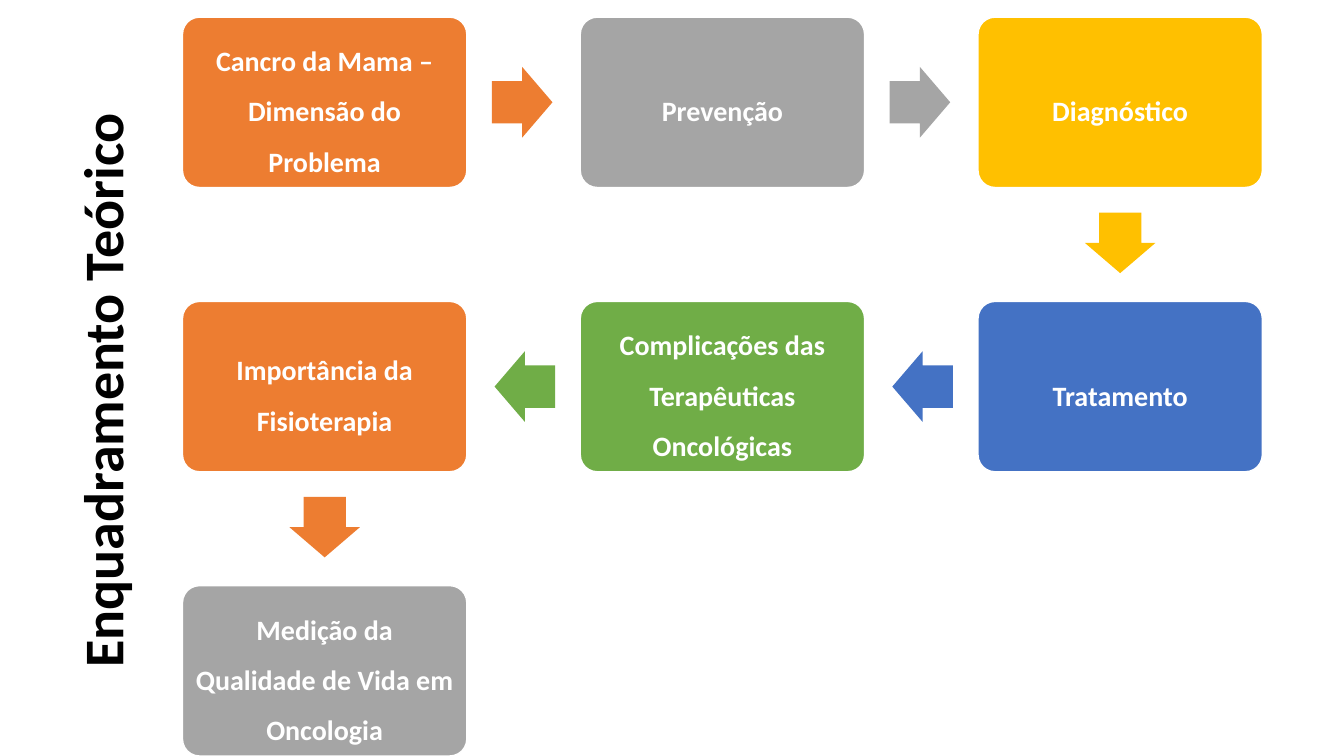
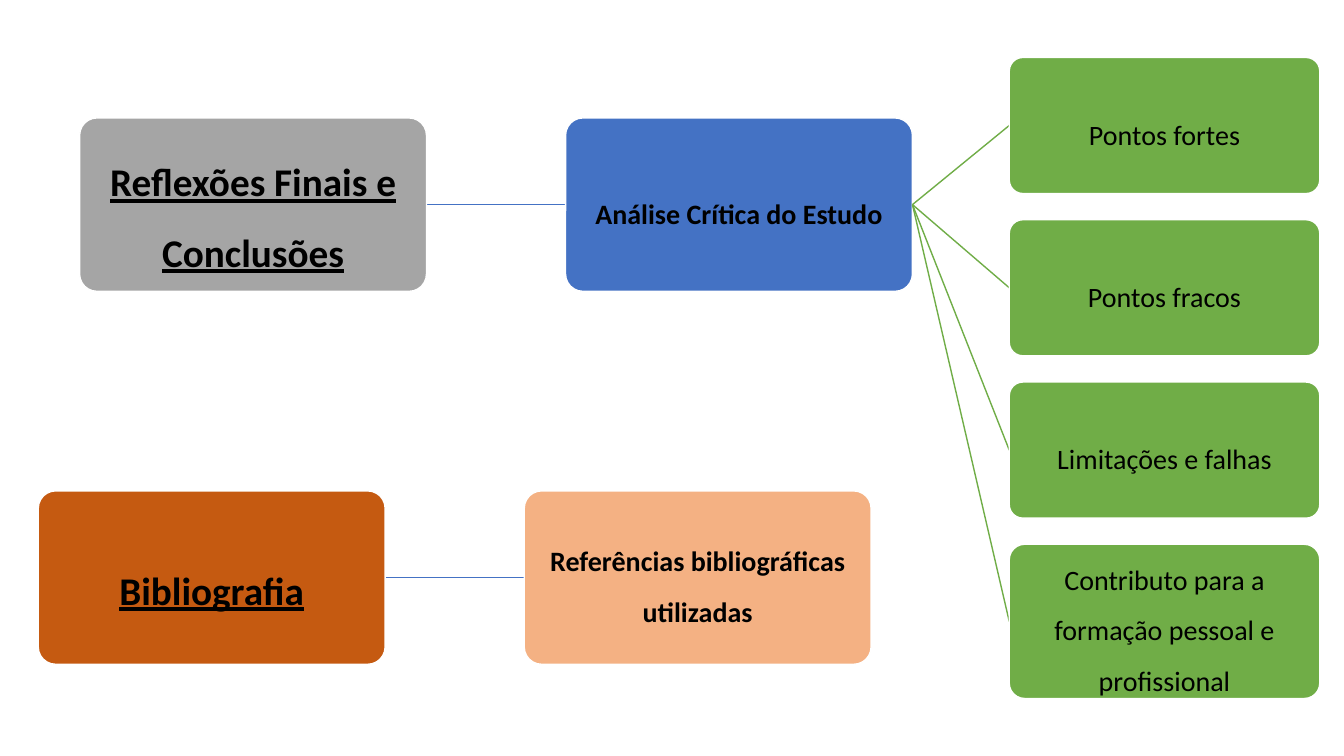
from pptx import Presentation
from pptx.dml.color import RGBColor
from pptx.enum.shapes import MSO_CONNECTOR, MSO_SHAPE
from pptx.enum.text import MSO_ANCHOR, MSO_AUTO_SIZE, PP_ALIGN
from pptx.oxml.ns import qn
from pptx.util import Inches, Pt
from lxml import etree

FONT = "Calibri"
COLORS = {
    "black": "000000", "white": "FFFFFF", "orange": "ED7D31", "gray": "A5A5A5",
    "gold": "FFC000", "blue": "4472C4", "green": "70AD47",
    "rust": "C55A11", "peach": "F4B183",
}

# Process steps: text, colour, column, row
STEPS = [
    ("Cancro da Mama – Dimensão do Problema", "orange", 0, 0),
    ("Prevenção", "gray", 1, 0),
    ("Diagnóstico", "gold", 2, 0),
    ("Tratamento", "blue", 2, 1),
    ("Complicações das Terapêuticas Oncológicas", "green", 1, 1),
    ("Importância da Fisioterapia", "orange", 0, 1),
    ("Medição da Qualidade de Vida em Oncologia", "gray", 0, 2),
]
STEP_WIDTH, STEP_HEIGHT = 2.82, 1.69
STEP_LEFT, STEP_TOP = 1.81, 0.17
COLUMN_PITCH, ROW_PITCH = (9.70 - STEP_LEFT) / 2, 2.82
ARROW_WIDTH, ARROW_HEIGHT, ARROW_OFFSET = 0.6, 0.7, 0.55
ARROW_ANGLES = {(1, 0): 0, (-1, 0): 180, (0, 1): 90}

# Trees: left, top, root text and colour, child text and colour
TREES = [
    (0.79, 1.17, "Reflexões Finais e Conclusões", "gray",
     "Análise Crítica do Estudo", "blue"),
    (0.38, 4.87, "Bibliografia", "rust",
     "Referências bibliográficas utilizadas", "peach"),
]
NODE_WIDTH, NODE_HEIGHT, NODE_PITCH = 3.44, 1.72, 4.82

# Leaves of the first tree: text, height
LEAVES = [
    ("Pontos fortes", 1.35),
    ("Pontos fracos", 1.35),
    ("Limitações e falhas", 1.35),
    ("Contributo para a formação pessoal e profissional", 1.53),
]
LEAF_LEFT, LEAF_TOP, LEAF_WIDTH, LEAF_PITCH = 10.01, 0.57, 3.08, 1.61


def color(name):
    return RGBColor.from_string(COLORS[name])


def style_text(para, size, ink="black", bold=True, underline=False):
    for span in para.runs:
        span.font.name = FONT
        span.font.size = Pt(size)
        span.font.color.rgb = color(ink)
        span.font.bold = bold
        span.font.underline = underline


def add_box(page, left, top, width, height, text, fill, inset=0.01, size=20, **style):
    box = page.shapes.add_shape(MSO_SHAPE.ROUNDED_RECTANGLE, Inches(left), Inches(top),
                                Inches(width), Inches(height))
    box.adjustments[0] = 0.1
    box.shadow.inherit = False
    box.fill.solid()
    box.fill.fore_color.rgb = color(fill)
    box.line.color.rgb = color("white")
    box.line.width = Pt(1)
    frame = box.text_frame
    frame.word_wrap = True
    frame.vertical_anchor = MSO_ANCHOR.MIDDLE
    frame.margin_left = frame.margin_right = Inches(inset)
    frame.margin_top = frame.margin_bottom = Inches(inset)
    frame.text = text
    para = frame.paragraphs[0]
    para.alignment = PP_ALIGN.CENTER
    para.line_spacing = 1.5
    style_text(para, size, **style)


def add_arrow(page, center_x, center_y, angle, fill):
    arrow = page.shapes.add_shape(
        MSO_SHAPE.RIGHT_ARROW, Inches(center_x - ARROW_WIDTH / 2),
        Inches(center_y - ARROW_HEIGHT / 2), Inches(ARROW_WIDTH), Inches(ARROW_HEIGHT))
    arrow.adjustments[0] = 0.6
    arrow.adjustments[1] = 0.5
    arrow.rotation = angle
    arrow.shadow.inherit = False
    arrow.fill.solid()
    arrow.fill.fore_color.rgb = color(fill)
    arrow.line.fill.background()


def add_line(page, start, end, stroke):
    line = page.shapes.add_connector(MSO_CONNECTOR.STRAIGHT,
                                     *(Inches(value) for value in (*start, *end)))
    line.line.color.rgb = color(stroke)
    line.line.width = Pt(1)
    properties = line._element.find(qn("p:spPr"))
    etree.SubElement(properties, qn("a:effectLst"))


def add_side_title(page, text):
    box = page.shapes.add_textbox(Inches(-1.88), Inches(3.45), Inches(5.77), Inches(0.77))
    box.rotation = 270
    frame = box.text_frame
    frame.word_wrap = True
    frame.auto_size = MSO_AUTO_SIZE.SHAPE_TO_FIT_TEXT
    frame.text = text
    style_text(frame.paragraphs[0], 40)


def add_process(page):
    for index, (text, fill, column, row) in enumerate(STEPS):
        left = STEP_LEFT + column * COLUMN_PITCH
        top = STEP_TOP + row * ROW_PITCH
        add_box(page, left, top, STEP_WIDTH, STEP_HEIGHT, text, fill,
                inset=0.08, ink="white")
        # Arrow towards the next step
        if index + 1 < len(STEPS):
            next_column, next_row = STEPS[index + 1][2:]
            across, down = next_column - column, next_row - row
            add_arrow(page,
                      left + STEP_WIDTH / 2 + across * (STEP_WIDTH / 2 + ARROW_OFFSET),
                      top + STEP_HEIGHT / 2 + down * (STEP_HEIGHT / 2 + ARROW_OFFSET),
                      ARROW_ANGLES[across, down], fill)


def add_tree(page, left, top, root, root_fill, child, child_fill):
    middle = top + NODE_HEIGHT / 2
    child_left = left + NODE_PITCH
    add_line(page, (left + NODE_WIDTH, middle), (child_left, middle), "blue")
    add_box(page, left, top, NODE_WIDTH, NODE_HEIGHT, root, root_fill,
            inset=0.02, size=28, underline=True)
    add_box(page, child_left, top, NODE_WIDTH, NODE_HEIGHT, child, child_fill)
    return child_left + NODE_WIDTH, middle


def add_leaves(page, start):
    for index, (text, height) in enumerate(LEAVES):
        top = LEAF_TOP + index * LEAF_PITCH
        add_line(page, start, (LEAF_LEFT, top + height / 2), "green")
        add_box(page, LEAF_LEFT, top, LEAF_WIDTH, height, text, "green", bold=False)


def main():
    deck = Presentation()
    deck.slide_width, deck.slide_height = Inches(13.33), Inches(7.5)
    blank = deck.slide_layouts[6]

    # Theoretical framework
    page = deck.slides.add_slide(blank)
    add_process(page)
    add_side_title(page, "Enquadramento Teórico")

    # Conclusions and bibliography
    page = deck.slides.add_slide(blank)
    tree_ends = [add_tree(page, *tree) for tree in TREES]
    add_leaves(page, tree_ends[0])

    deck.save("out.pptx")


if __name__ == "__main__":
    main()
